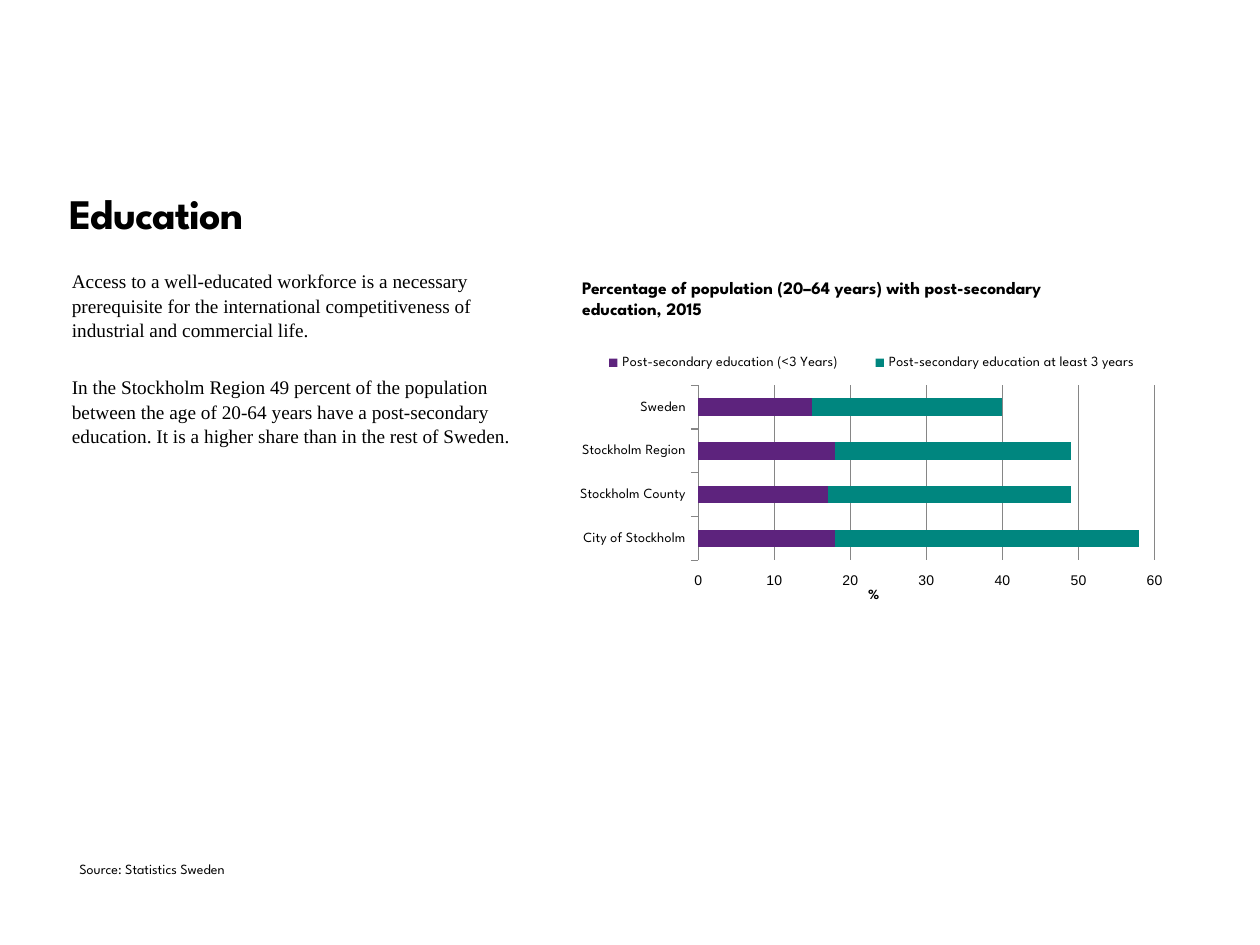
from pptx import Presentation
from pptx.chart.data import CategoryChartData
from pptx.dml.color import RGBColor
from pptx.enum.chart import XL_CHART_TYPE, XL_LEGEND_POSITION, XL_TICK_MARK
from pptx.oxml import parse_xml
from pptx.oxml.ns import nsdecls, qn
from pptx.util import Inches, Pt

BAR_STACKED = XL_CHART_TYPE.BAR_STACKED
LEGEND_TOP = XL_LEGEND_POSITION.TOP
TICK_OUTSIDE = XL_TICK_MARK.OUTSIDE

DISPLAY = "League Spartan"
SERIF = "Times New Roman"
SANS = "Arial"
BLACK = "000000"
GRAY = "868686"

BODY = [
    "Access to a well-educated workforce is a necessary prerequisite for the "
    "international competitiveness of industrial and commercial life.",
    "In the Stockholm Region 49 percent of the population between the age of 20-64 "
    "years have a post-secondary education. It is a higher share than in the rest of Sweden.",
]
CATEGORIES = ["City of Stockholm", "Stockholm County", "Stockholm Region", "Sweden"]
SERIES = [
    ("Post-secondary education (<3 Years)", [18, 17, 18, 15], "5D237D"),
    ("Post-secondary education at least 3 years", [40, 32, 31, 25], "00867F"),
]


def color(value):
    return RGBColor.from_string(value)


def set_values(target, values):
    for name, value in values.items():
        setattr(target, name, value)


def set_font(font, name, size, bold=False):
    set_values(font, {"name": name, "size": Pt(size), "bold": bold})
    font.color.rgb = color(BLACK)


def add_text(page, box, texts, font, size, bold=False, spacing=None, after=0, tracking=None):
    shape = page.shapes.add_textbox(*map(Inches, box))
    frame = shape.text_frame
    margins = dict.fromkeys(["margin_left", "margin_top", "margin_right", "margin_bottom"], 0)
    set_values(frame, {"word_wrap": True, **margins})
    for index, text in enumerate(texts):
        para = frame.add_paragraph() if index else frame.paragraphs[0]
        set_values(para, {"line_spacing": spacing, "space_after": Pt(after)})
        span = para.add_run()
        span.text = text
        set_font(span.font, font, size, bold)
        if tracking:
            span.font._element.set("spc", str(tracking))


def set_layout(element, position, values, inner=False):
    for old in element.findall(qn("c:layout")):
        element.remove(old)
    target = '<c:layoutTarget val="inner"/>' if inner else ""
    modes = '<c:xMode val="edge"/><c:yMode val="edge"/>'
    sizes = "".join(f'<c:{key} val="{value}"/>' for key, value in zip("xywh", values))
    layout = parse_xml(
        f'<c:layout {nsdecls("c")}><c:manualLayout>{target}{modes}{sizes}'
        "</c:manualLayout></c:layout>"
    )
    element.insert(position, layout)


def style_axes(chart):
    categories, values = chart.category_axis, chart.value_axis
    set_values(categories, {"major_tick_mark": TICK_OUTSIDE, "has_major_gridlines": False})
    set_font(categories.tick_labels.font, DISPLAY, 8)
    set_values(values, {
        "minimum_scale": 0, "maximum_scale": 60, "major_unit": 10,
        "major_tick_mark": TICK_OUTSIDE, "has_major_gridlines": True,
    })
    set_values(values.tick_labels, {"number_format": "0", "number_format_is_linked": False})
    set_font(values.tick_labels.font, SANS, 8)
    values.format.line.fill.background()
    for line in (categories.format.line, values.major_gridlines.format.line):
        line.color.rgb = color(GRAY)
        line.width = Pt(0.75)
    title = values.axis_title
    span = title.text_frame.paragraphs[0].add_run()
    span.text = "%"
    set_font(span.font, DISPLAY, 8, True)
    set_layout(title._element, 1, [0.49, 0.92])


def add_education_chart(page, box):
    data = CategoryChartData(number_format="0")
    data.categories = CATEGORIES
    for name, values, _ in SERIES:
        data.add_series(name, values)
    chart = page.shapes.add_chart(BAR_STACKED, *map(Inches, box), data).chart
    set_values(chart, {"has_title": False, "has_legend": True})
    set_font(chart.font, SANS, 8)
    set_values(chart.legend, {"position": LEGEND_TOP, "include_in_layout": False})
    set_font(chart.legend.font, DISPLAY, 8)
    set_layout(chart.legend._element, 1, [0.04, 0.03, 0.92, 0.11])
    plot = chart.plots[0]
    set_values(plot, {"gap_width": 150, "overlap": 100, "vary_by_categories": False})
    for series, (_, _, fill) in zip(plot.series, SERIES):
        series.format.fill.solid()
        series.format.fill.fore_color.rgb = color(fill)
    style_axes(chart)
    plot_area = chart._chartSpace.chart.plotArea
    set_layout(plot_area, 0, [0.23, 0.17, 0.71, 0.66], inner=True)


def build_education_page(page):
    add_text(page, (0.57, 2.13, 3.52, 3.45), BODY, SERIF, 11, spacing=1.05, after=19)
    add_text(page, (0.55, 1.5, 6.09, 0.88), ["Education"], DISPLAY, 24, True,
             spacing=Pt(28), tracking=-50)
    add_text(page, (4.62, 2.2, 3.99, 0.35),
             ["Percentage of population (20–64 years) with post-secondary education, 2015"],
             DISPLAY, 10, True)
    add_text(page, (0.63, 6.83, 1.71, 0.18), ["Source: Statistics Sweden"], DISPLAY, 8)
    add_education_chart(page, (4.37, 2.7, 5.1, 2.11))


def main():
    deck = Presentation()
    set_values(deck, {"slide_width": Inches(10), "slide_height": Inches(7.5)})
    build_education_page(deck.slides.add_slide(deck.slide_layouts[6]))
    deck.save("out.pptx")


if __name__ == "__main__":
    main()
